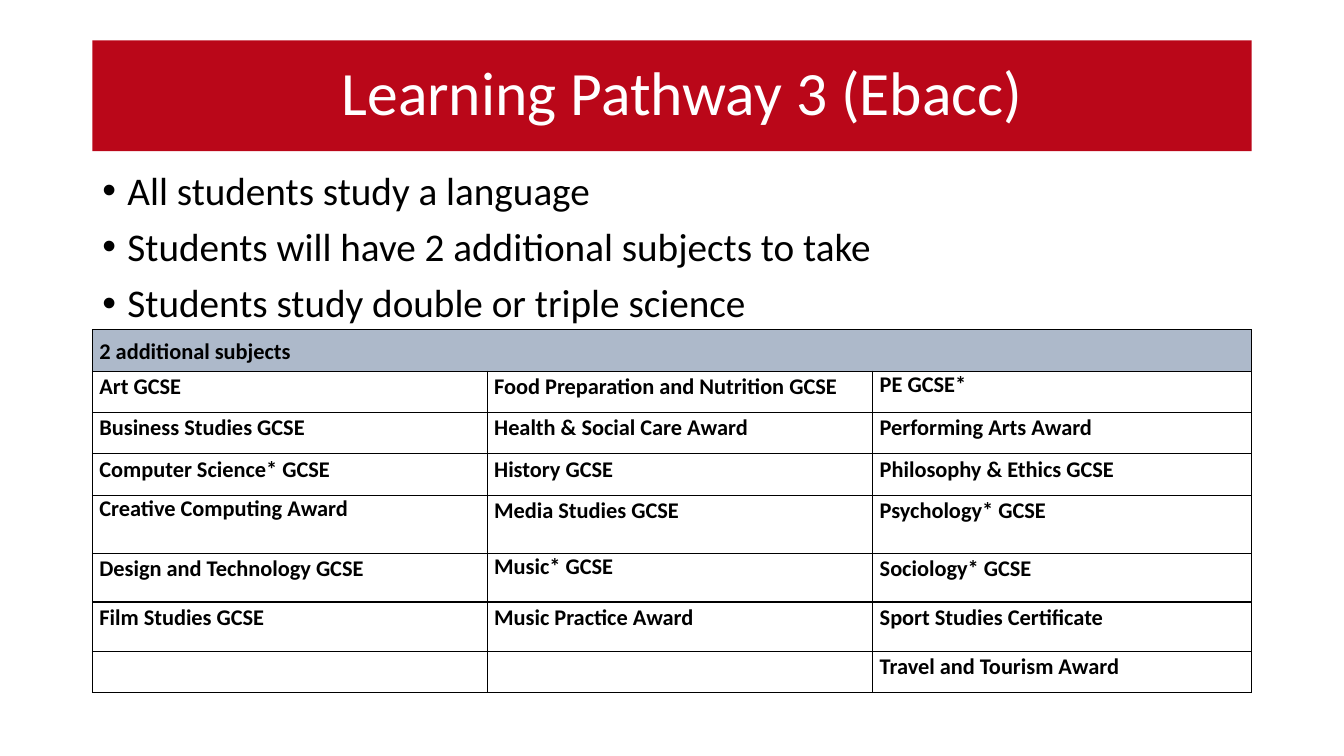
from dataclasses import dataclass
from typing import Any

from lxml import etree
from pptx import Presentation
from pptx import util as u
from pptx.dml.color import RGBColor
from pptx.enum import text as t
from pptx.oxml import ns

# Grid: 160 columns by 90 rows, 12 units to the inch
UNIT = u.Inches(1) / 12
COLUMNS, ROWS = 160, 90


@dataclass(frozen=True)
class Theme:
    font: str = "Calibri"
    red: str = "BA0719"
    header: str = "ADB9CA"
    black: str = "000000"
    white: str = "FFFFFF"
    title: int = 44
    body: int = 28
    table: int = 16


@dataclass(frozen=True)
class Area:
    left: float
    top: float
    width: float
    height: float


THEME = Theme()
TITLE_AREA = Area(11, 4.8, 138, 13.2)
TABLE_AREA = Area(11, 39.25, 138, 43.2)
BULLET_AREA = Area(11, 19.8, 136.3, 23.5)

COLUMN_WIDTHS = [47, 45.9, 45.1]
ROW_HEIGHTS = [4.93] * 4 + [6.95, 5.75, 5.9, 4.93]

BULLETS = [
    "All students study a language",
    "Students will have 2 additional subjects to take",
    "Students study double or triple science",
]
SUBJECTS = [
    ["2 additional subjects", "", ""],
    ["Art GCSE", "Food Preparation and Nutrition GCSE", "PE GCSE*"],
    ["Business Studies GCSE", "Health & Social Care Award", "Performing Arts Award"],
    ["Computer Science* GCSE", "History GCSE", "Philosophy & Ethics GCSE"],
    ["Creative Computing Award", "Media Studies GCSE", "Psychology* GCSE"],
    ["Design and Technology GCSE", "Music* GCSE", "Sociology* GCSE"],
    ["Film Studies GCSE", "Music Practice Award", "Sport Studies Certificate"],
    ["", "", "Travel and Tourism Award"],
]
SINGLE_SPACED = {"PE GCSE*", "Creative Computing Award", "Music* GCSE"}


def grid(units: float) -> int:
    return round(units * UNIT)


def bounds(area: Area) -> tuple[int, ...]:
    return tuple(grid(n) for n in (area.left, area.top, area.width, area.height))


def apply(target: Any, values: dict[str, Any]) -> None:
    for name, value in values.items():
        setattr(target, name, value)


def write(para: Any, words: str, size: int, color: str, bold: bool = False) -> None:
    span = para.add_run()
    span.text = words
    apply(span.font, {"name": THEME.font, "size": u.Pt(size), "bold": bold})
    span.font.color.rgb = RGBColor.from_string(color)


def add_bullet(para: Any) -> None:
    props = para._p.get_or_add_pPr()
    props.set("marL", str(u.Inches(0.25)))
    props.set("indent", str(-u.Inches(0.25)))
    etree.SubElement(props, ns.qn("a:buFont")).set("typeface", "Arial")
    etree.SubElement(props, ns.qn("a:buChar")).set("char", "•")


def add_borders(cell: Any) -> None:
    props = cell._tc.get_or_add_tcPr()
    for place, side in enumerate(("lnL", "lnR", "lnT", "lnB")):
        line = etree.Element(ns.qn(f"a:{side}"), w=str(u.Pt(1)))
        fill = etree.SubElement(line, ns.qn("a:solidFill"))
        etree.SubElement(fill, ns.qn("a:srgbClr")).set("val", THEME.black)
        props.insert(place, line)


def draw_title(page: Any) -> None:
    title = page.shapes.title
    apply(title, dict(zip(("left", "top", "width", "height"), bounds(TITLE_AREA))))
    title.fill.solid()
    title.fill.fore_color.rgb = RGBColor.from_string(THEME.red)
    apply(title.text_frame, {
        "margin_left": u.Inches(0.31),
        "vertical_anchor": t.MSO_ANCHOR.MIDDLE,
        "auto_size": t.MSO_AUTO_SIZE.NONE,
    })
    para = title.text_frame.paragraphs[0]
    apply(para, {"alignment": t.PP_ALIGN.CENTER, "line_spacing": 0.9})
    write(para, "Learning Pathway 3 (Ebacc)", THEME.title, THEME.white)


def draw_table(page: Any) -> None:
    frame = page.shapes.add_table(len(SUBJECTS), len(COLUMN_WIDTHS), *bounds(TABLE_AREA))
    table = frame.table
    apply(table, {"first_row": False, "horz_banding": False})
    for column, width in zip(table.columns, COLUMN_WIDTHS):
        column.width = grid(width)
    for row, height in zip(table.rows, ROW_HEIGHTS):
        row.height = grid(height)
    for r, subjects in enumerate(SUBJECTS):
        for c, subject in enumerate(subjects):
            cell = table.cell(r, c)
            apply(cell, {
                "margin_left": u.Inches(0.07), "margin_right": u.Inches(0.07),
                "margin_top": 0, "margin_bottom": 0,
                "vertical_anchor": t.MSO_ANCHOR.TOP if r else t.MSO_ANCHOR.MIDDLE,
            })
            cell.fill.solid()
            color = THEME.white if r else THEME.header
            cell.fill.fore_color.rgb = RGBColor.from_string(color)
            add_borders(cell)
            if subject:
                para = cell.text_frame.paragraphs[0]
                para.line_spacing = 1.0 if subject in SINGLE_SPACED else 1.07
                write(para, subject, THEME.table, THEME.black, bold=True)
    table.cell(0, 0).merge(table.cell(0, len(COLUMN_WIDTHS) - 1))


def draw_bullets(page: Any) -> None:
    box = page.shapes.add_textbox(*bounds(BULLET_AREA))
    box.text_frame.word_wrap = True
    for i, words in enumerate(BULLETS):
        para = box.text_frame.add_paragraph() if i else box.text_frame.paragraphs[0]
        add_bullet(para)
        apply(para, {"line_spacing": 0.9, "space_before": u.Pt(10 if i else 0)})
        write(para, words, THEME.body, THEME.black)


def main() -> None:
    deck = Presentation()
    apply(deck, {"slide_width": grid(COLUMNS), "slide_height": grid(ROWS)})
    page = deck.slides.add_slide(deck.slide_layouts.get_by_name("Title Only"))
    # Red banner
    draw_title(page)
    # Subject options
    draw_table(page)
    # Pathway rules
    draw_bullets(page)
    deck.save("out.pptx")


if __name__ == "__main__":
    main()
